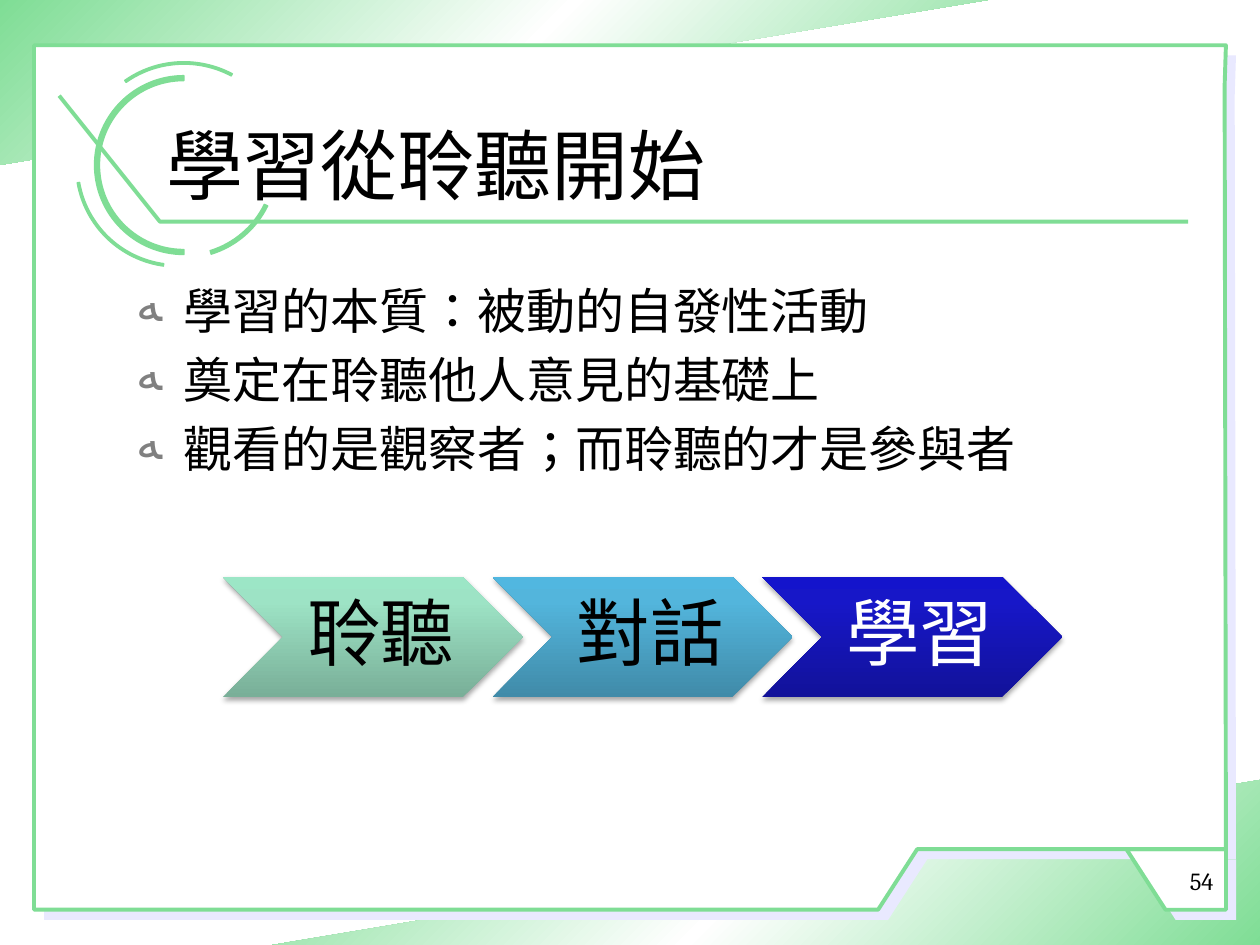
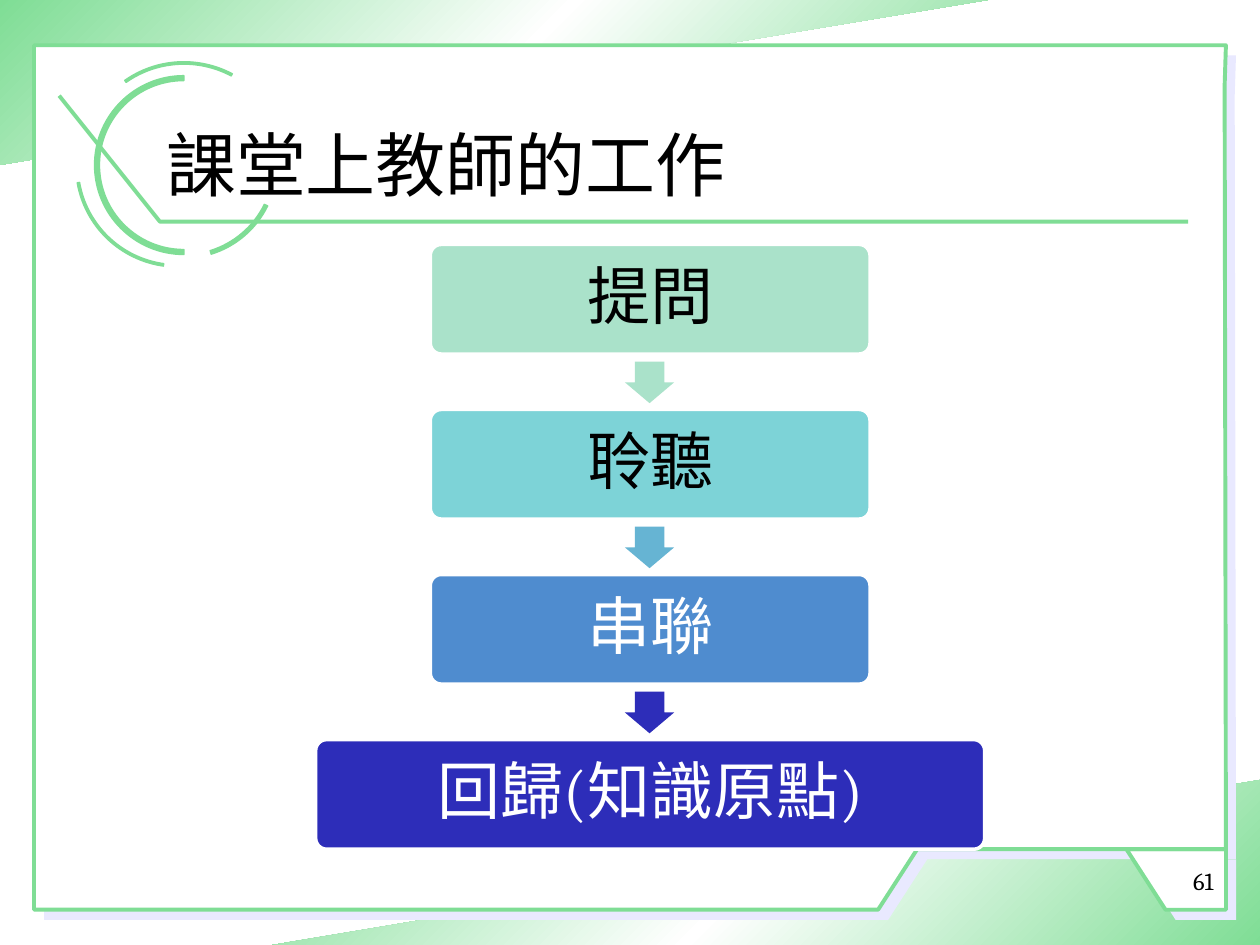
"""Build two lesson slides: learning begins with listening, and the teacher's work in class."""
import math

from lxml import etree
from pptx import Presentation
from pptx import util as u
from pptx.dml.color import RGBColor
from pptx.enum import shapes, text
from pptx.oxml import ns

FONT = "Cambria"
GREEN = RGBColor(0x7F, 0xDD, 0x95)
LAVENDER = RGBColor(0xE9, 0xE9, 0xFF)
WHITE = RGBColor(0xFF, 0xFF, 0xFF)
BLACK = RGBColor(0, 0, 0)
GREY = RGBColor(0x80, 0x80, 0x80)
MINT = RGBColor(0xAA, 0xE2, 0xCA)
AQUA = RGBColor(0x7D, 0xD3, 0xD7)
SKY = RGBColor(0x66, 0xB4, 0xD3)
BLUE = RGBColor(0x4F, 0x8C, 0xCF)
NAVY = RGBColor(0x2D, 0x2D, 0xB9)
CORNER_STOPS = [(0, GREEN), (50, WHITE), (100, GREEN)]
MINT_STOPS = [(0, RGBColor(0x79, 0xAF, 0x98)), (80, RGBColor(0x9D, 0xE3, 0xC5)),
              (100, RGBColor(0x9C, 0xE6, 0xC6))]
SKY_STOPS = [(0, RGBColor(0x40, 0x8B, 0xA9)), (80, RGBColor(0x53, 0xB5, 0xDC)),
             (100, RGBColor(0x51, 0xB7, 0xE0))]
NAVY_STOPS = [(0, RGBColor(0x12, 0x12, 0x9A)), (80, RGBColor(0x17, 0x17, 0xC8)),
              (100, RGBColor(0x14, 0x14, 0xCC))]
TAB = [(8.94, 6.74), (9.25, 7.22), (9.73, 7.22), (9.73, 6.74)]
PANEL = [(0.27, 0.36), (0.27, 7.22), (6.97, 7.22), (7.28, 6.74), (9.73, 6.74),
         (9.72, 0.68), (9.73, 0.36)]
TITLE_RULE = [(0.47, 0.76), (1.27, 1.76), (9.43, 1.76)]
ARCS_BEFORE_RULE = [(1.41, 0.79, 0.81, 98, 170), (1.46, 0.80, 0.82, 235, 298)]
ARCS_AFTER_RULE = [(1.46, 0.67, 0.71, 90, 270), (1.46, 0.71, 0.74, 26, 73)]
ARC_Y = 1.31


def add_xml(parent, tag, **attrs):
    """Append a DrawingML element and return it."""
    return etree.SubElement(parent, ns.qn(tag), {k: str(v) for k, v in attrs.items()})


def paint(sp, fill=None, line=None, width=0.75):
    """Give a shape a solid fill and an outline, or none, and no shadow."""
    sp.shadow.inherit = False
    if fill is None:
        sp.fill.background()
    else:
        sp.fill.solid()
        sp.fill.fore_color.rgb = fill
    if line is None:
        sp.line.fill.background()
    else:
        sp.line.color.rgb = line
        sp.line.width = u.Pt(width)


def paint_gradient(sp, stops, angle):
    """Replace the fill of a shape with a linear gradient."""
    paint(sp)
    sp_pr = sp._element.spPr
    sp_pr.remove(sp_pr.find(ns.qn("a:noFill")))
    grad = etree.Element(ns.qn("a:gradFill"), rotWithShape="1")
    stop_list = add_xml(grad, "a:gsLst")
    for pos, color in stops:
        add_xml(add_xml(stop_list, "a:gs", pos=pos * 1000), "a:srgbClr", val=color)
    add_xml(grad, "a:lin", ang=angle * 60000, scaled=1)
    sp_pr.find(ns.qn("a:prstGeom")).addnext(grad)


def add_drop_shadow(sp):
    """Give a shape a soft shadow straight below it."""
    effects = sp._element.spPr.find(ns.qn("a:effectLst"))
    shadow = add_xml(effects, "a:outerShdw", blurRad=u.Pt(3.1), dist=u.Pt(1.8),
                     dir=5400000, rotWithShape=0)
    add_xml(add_xml(shadow, "a:srgbClr", val=BLACK), "a:alpha", val=35000)


def add_preset(slide, kind, left, top, width, height):
    """Add a preset shape measured in inches."""
    return slide.shapes.add_shape(kind, *map(u.Inches, (left, top, width, height)))


def add_outline(slide, points, closed=True, shift=0):
    """Add a freeform through points, moved down and right by shift."""
    pts = [(u.Inches(x + shift), u.Inches(y + shift)) for x, y in points]
    builder = slide.shapes.build_freeform(*pts[0], scale=1.0)
    builder.add_line_segments(pts[1:], close=closed)
    return builder.convert_to_shape()


def arc_points(center_x, radius, start, end):
    """Return end points and control points of two cubic curves along an arc."""
    half = math.radians(end - start) / 2
    reach = radius * 4 / 3 * math.tan(half / 4)
    points = []
    for i in range(3):
        a = math.radians(start) + i * half
        x, y = center_x + radius * math.cos(a), ARC_Y + radius * math.sin(a)
        dx, dy = -reach * math.sin(a), reach * math.cos(a)
        points += [(x - dx, y - dy), (x, y), (x + dx, y + dy)]
    return points[1:-1]


def add_arc(slide, center_x, inner, outer, start, end):
    """Add a thin ring segment whose two edges are cubic curves."""
    sp = add_outline(slide, arc_points(center_x, inner, start, end)
                     + arc_points(center_x, outer, end, start))
    lines = list(sp._element.iter(ns.qn("a:lnTo")))
    for first in (0, 3, 7, 10):
        curve = etree.Element(ns.qn("a:cubicBezTo"))
        lines[first].addprevious(curve)
        for line in lines[first:first + 3]:
            curve.append(line[0])
            line.getparent().remove(line)
    paint(sp, GREEN, GREEN)


def format_paragraph(p, size, color=BLACK, align=None):
    """Set the alignment of a paragraph and the font of its runs."""
    p.alignment = align
    for r in p.runs:
        r.font.name = FONT
        r.font.size = u.Pt(size)
        r.font.color.rgb = color
        r._r.get_or_add_rPr().set("lang", "zh-TW")


def add_text(slide, box, lines, size, align=None, anchor=text.MSO_ANCHOR.TOP):
    """Add a wrapping text box with one paragraph per line."""
    tf = slide.shapes.add_textbox(*map(u.Inches, box)).text_frame
    tf.word_wrap = True
    tf.vertical_anchor = anchor
    tf.text = "\n".join(lines)
    for p in tf.paragraphs:
        format_paragraph(p, size, align=align)
    return tf


def add_bullets(slide, box, lines, size):
    """Add a bulleted list with hanging indents."""
    for p in add_text(slide, box, lines, size).paragraphs:
        p_pr = p._p.get_or_add_pPr()
        p_pr.set("marL", str(u.Inches(0.38)))
        p_pr.set("indent", str(u.Inches(-0.38)))
        add_xml(add_xml(p_pr, "a:spcBef"), "a:spcPct", val=20000)
        add_xml(add_xml(p_pr, "a:buClr"), "a:srgbClr", val=GREY)
        add_xml(p_pr, "a:buChar", char="ﻪ")


def label(sp, words, size, color, insets):
    """Write centred words inside a shape."""
    tf = sp.text_frame
    tf.margin_left, tf.margin_top, tf.margin_right, tf.margin_bottom = map(u.Inches, insets)
    tf.vertical_anchor = text.MSO_ANCHOR.MIDDLE
    tf.text = words
    p = tf.paragraphs[0]
    p.line_spacing = 0.9
    format_paragraph(p, size, color, text.PP_ALIGN.CENTER)


def add_frame(slide):
    """Draw the green corners, the panel with its tab, and the title ornament."""
    for left, top, flip in [(2.16, 6.19, "flipH"), (0, 0, "flipV")]:
        sp = add_preset(slide, shapes.MSO_SHAPE.RIGHT_TRIANGLE, left, top, 7.84, 1.31)
        paint_gradient(sp, CORNER_STOPS, 315)
        sp._element.spPr.xfrm.set(flip, "1")
    for shift, fill, line in [(0.08, LAVENDER, None), (0, WHITE, GREEN)]:
        for points in (TAB, PANEL):
            paint(add_outline(slide, points, shift=shift), fill, line, 2.25)
    for arc in ARCS_BEFORE_RULE:
        add_arc(slide, *arc)
    paint(add_outline(slide, TITLE_RULE, closed=False), None, GREEN, 2.25)
    for arc in ARCS_AFTER_RULE:
        add_arc(slide, *arc)


def add_slide(prs, title, title_size):
    """Add a blank slide with the shared frame and title."""
    slide = prs.slides.add_slide(prs.slide_layouts[6])
    add_frame(slide)
    add_text(slide, (1.22, 0.67, 8.03, 1.25), [title], title_size,
             anchor=text.MSO_ANCHOR.MIDDLE)
    return slide


def add_page_number(slide, number):
    """Write the page number in the corner tab."""
    add_text(slide, (9.02, 6.82, 0.71, 0.38), [str(number)], 14, text.PP_ALIGN.RIGHT)


def add_chevrons(slide, steps):
    """Lay out process chevrons from left to right."""
    for i, (words, stops, color) in enumerate(steps):
        sp = add_preset(slide, shapes.MSO_SHAPE.CHEVRON, 1.77 + 2.14 * i, 4.58, 2.38, 0.95)
        paint_gradient(sp, stops, 270)
        add_drop_shadow(sp)
        label(sp, words, 42, color, (0.18, 0.06, 0.06, 0.06))


def add_flow(slide, steps):
    """Stack rounded boxes, each but the last with a downward arrow below it."""
    center, pitch = 5.16, 1.31
    for i, (words, fill, color, width, arrow) in enumerate(steps):
        top = 1.94 + pitch * i
        sp = add_preset(slide, shapes.MSO_SHAPE.ROUNDED_RECTANGLE,
                        center - width / 2, top, width, 0.87)
        sp.adjustments[0] = 0.1
        paint(sp, fill, WHITE, 2)
        label(sp, words, 36, color, (0.15,) * 4)
        if arrow:
            sp = add_preset(slide, shapes.MSO_SHAPE.RIGHT_ARROW,
                            center - 0.17, top + 0.9, 0.33, 0.39)
            sp.adjustments[0], sp.adjustments[1] = 0.6, 0.5
            sp.rotation = 90
            paint(sp, arrow)


def main():
    """Build both slides and save them."""
    prs = Presentation()
    prs.slide_width, prs.slide_height = u.Inches(10), u.Inches(7.5)

    listening = add_slide(prs, "學習從聆聽開始", 44)
    add_bullets(listening, (0.98, 2.18, 8.28, 1.9),
                ["學習的本質：被動的自發性活動", "奠定在聆聽他人意見的基礎上",
                 "觀看的是觀察者；而聆聽的才是參與者"], 28)
    add_chevrons(listening, [("聆聽", MINT_STOPS, BLACK), ("對話", SKY_STOPS, BLACK),
                             ("學習", NAVY_STOPS, WHITE)])
    add_page_number(listening, 54)

    teaching = add_slide(prs, "課堂上教師的工作", 40)
    add_flow(teaching, [("提問", MINT, BLACK, 3.49, MINT), ("聆聽", AQUA, BLACK, 3.49, SKY),
                        ("串聯", BLUE, WHITE, 3.49, NAVY),
                        ("回歸(知識原點)", NAVY, WHITE, 5.31, None)])
    add_page_number(teaching, 61)
    prs.save("out.pptx")


if __name__ == "__main__":
    main()
